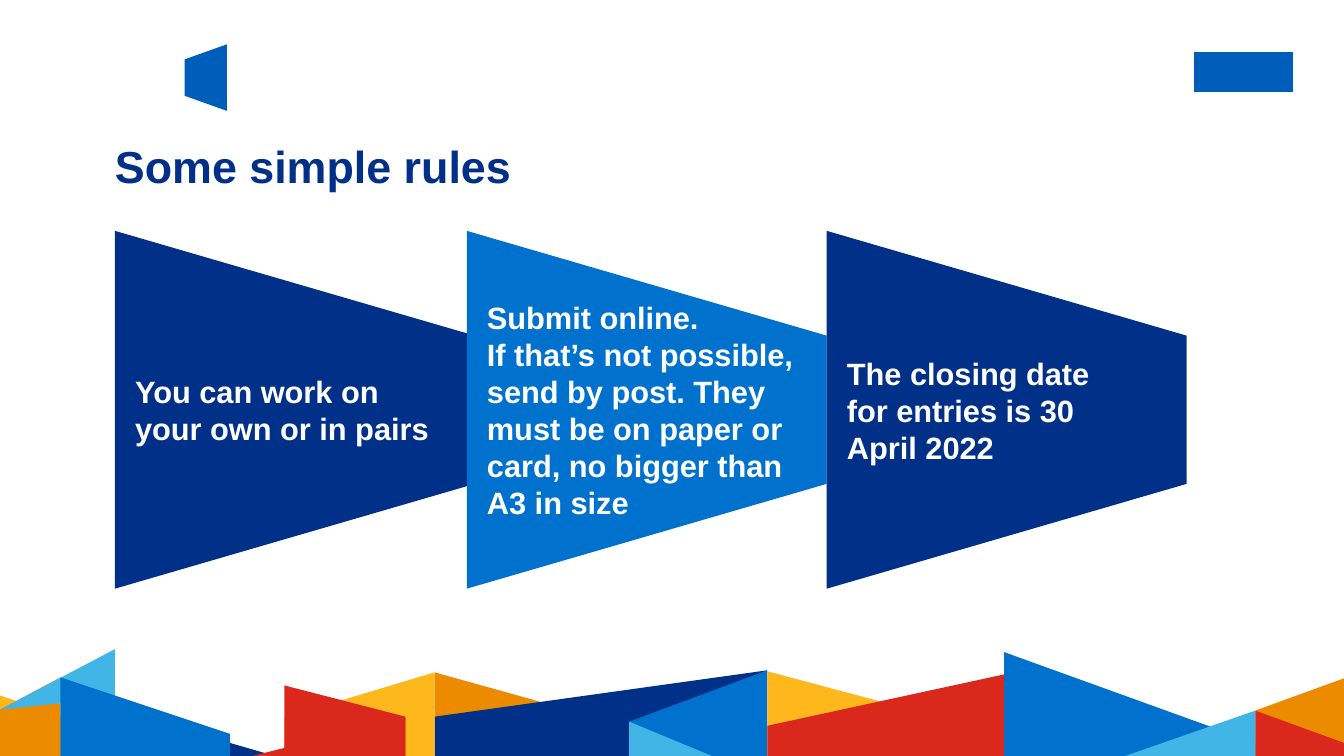
from pptx import Presentation
from pptx.dml.color import RGBColor
from pptx.enum.text import MSO_ANCHOR as ANCHOR, MSO_AUTO_SIZE as AUTO_SIZE, PP_ALIGN as ALIGN
from pptx.util import Pt

PX = 9144
SLIDE_W, SLIDE_H = 1333, 750
FONT = "Arial"
COLORS = {
    "navy": "003087",
    "blue": "0072CE",
    "badge": "005EBB",
    "sky": "41B6E6",
    "orange": "ED8B00",
    "yellow": "FFB81C",
    "red": "DA291C",
    "white": "FFFFFF",
}

LEFT, RULE_TOP, RULE_W, RULE_H, RULE_SLOPE = 114, 229, 357, 355, 104
RULES = [
    (114, "navy", ["You can work on\vyour own or in pairs"]),
    (463, "blue", [
        "Submit online.",
        "If that’s not possible, send by post. They must be on paper or card, "
        "no bigger than A3 in size",
    ]),
    (820, "navy", ["The closing date\vfor entries is 30\vApril 2022"]),
]

SLABS_BEHIND_WING = [
    (431, 535, 667, 696, "orange"),
    (431, 761, 711, 665, "navy"),
    (1245, SLIDE_W, 705, 673, "orange"),
    (0, 95, 690, 722, "yellow"),
    (282, 431, 712, 667, "yellow"),
    (0, 60, 704, 672, "orange"),
    (282, 402, 680, 711, "red"),
    (176, 273, 722, SLIDE_H, "navy"),
    (250, 402, SLIDE_H, 712, "red"),
]
WING = [(0, 704), (114, 644), (114, 692)]
SLABS_BEFORE_WING = [
    (60, 228, 672, 728, "blue"),
    (624, 761, 716, 665, "blue"),
    (624, 706, 716, SLIDE_H, "sky"),
    (996, 1245, 647, 737, "blue"),
    (1245, SLIDE_W, 705, 737, "red"),
    (1116, 1245, SLIDE_H, 705, "sky"),
    (761, 892, 666, 701, "yellow"),
    (761, 996, 720, 669, "red"),
]


def rgb(name):
    return RGBColor.from_string(COLORS[name])


def style_font(p, size, color):
    p.alignment = ALIGN.LEFT
    p.font.name = FONT
    p.font.size = Pt(size)
    p.font.bold = True
    p.font.color.rgb = rgb(color)


def add_polygon(s, points, color):
    builder = s.shapes.build_freeform(*points[0], scale=PX)
    builder.add_line_segments(points[1:], close=True)
    sp = builder.convert_to_shape()
    sp.shadow.inherit = False
    sp.fill.solid()
    sp.fill.fore_color.rgb = rgb(color)
    sp.line.fill.background()
    return sp


def add_slab(s, left, right, top_left, top_right, color):
    points = [(left, SLIDE_H), (left, top_left), (right, top_right), (right, SLIDE_H)]
    return add_polygon(s, list(dict.fromkeys(points)), color)


def add_footer(s):
    for slab in SLABS_BEHIND_WING:
        add_slab(s, *slab)
    add_polygon(s, WING, "sky")
    for slab in SLABS_BEFORE_WING:
        add_slab(s, *slab)


def add_badges(s):
    add_polygon(s, [(183, 59), (225, 44), (225, 110), (183, 95)], "badge")
    add_polygon(s, [(1184, 52), (1282, 52), (1282, 91), (1184, 91)], "badge")


def set_title(s, text):
    sp = s.shapes.title
    sp.left, sp.top, sp.width, sp.height = (v * PX for v in (LEFT, 144, 1064, 60))
    tf = sp.text_frame
    tf.text = text
    tf.auto_size = AUTO_SIZE.NONE
    tf.vertical_anchor = ANCHOR.TOP
    tf.margin_left = tf.margin_right = tf.margin_top = tf.margin_bottom = 0
    p = tf.paragraphs[0]
    p.line_spacing = 0.9
    style_font(p, 32, "navy")


def add_rule(s, left, color, lines):
    right, bottom = left + RULE_W, RULE_TOP + RULE_H
    sp = add_polygon(s, [
        (left, RULE_TOP),
        (right, RULE_TOP + RULE_SLOPE),
        (right, bottom - RULE_SLOPE),
        (left, bottom),
    ], color)
    tf = sp.text_frame
    tf.word_wrap = True
    tf.vertical_anchor = ANCHOR.MIDDLE
    tf.margin_left = tf.margin_right = 20 * PX
    tf.margin_top = tf.margin_bottom = 0
    for i, line in enumerate(lines):
        p = tf.add_paragraph() if i else tf.paragraphs[0]
        p.text = line
        style_font(p, 22, "white")


def main():
    prs = Presentation()
    prs.slide_width, prs.slide_height = SLIDE_W * PX, SLIDE_H * PX
    s = prs.slides.add_slide(prs.slide_layouts.get_by_name("Title Only"))
    add_badges(s)
    add_footer(s)
    set_title(s, "Some simple rules")
    for rule in RULES:
        add_rule(s, *rule)
    prs.save("out.pptx")


if __name__ == "__main__":
    main()
